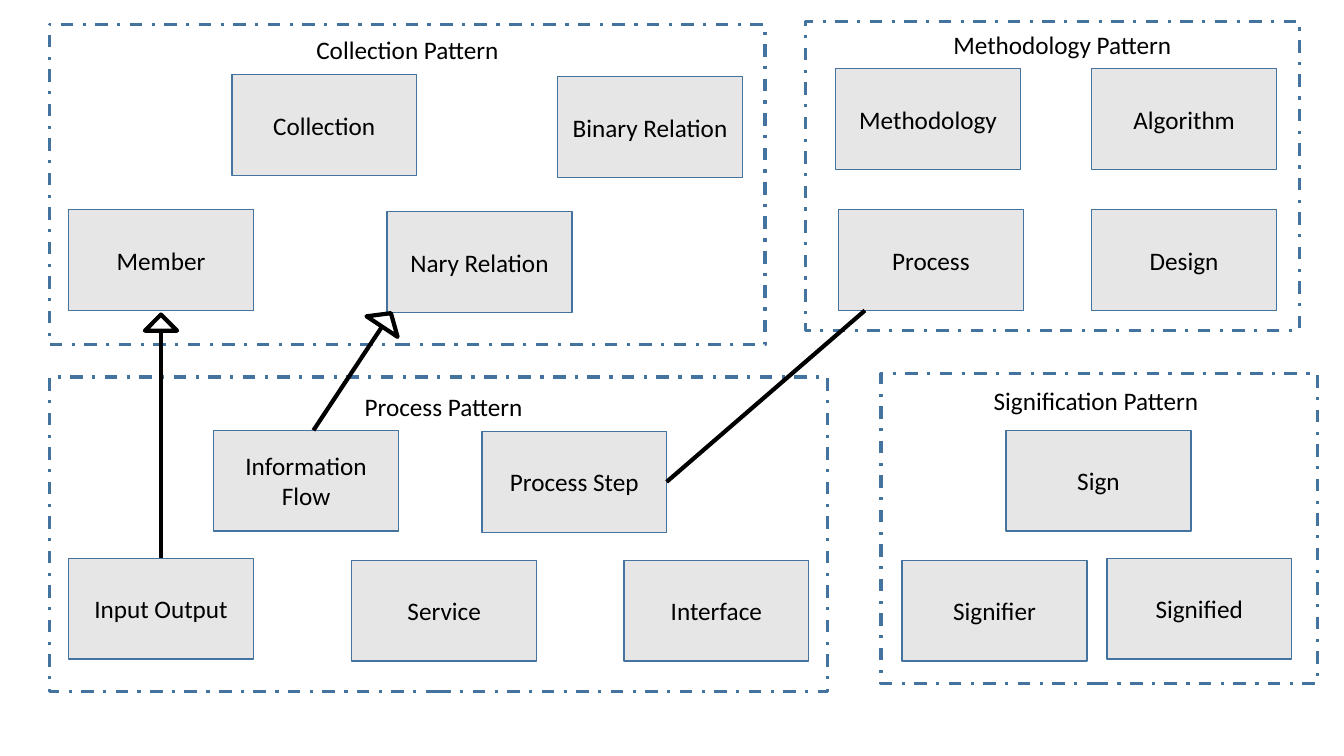
from math import atan2, cos, degrees, sin

from lxml.etree import SubElement
from pptx import Presentation
from pptx.dml.color import RGBColor
from pptx.enum.dml import MSO_LINE
from pptx.enum.shapes import MSO_CONNECTOR as CONNECTOR, MSO_SHAPE as SHAPE
from pptx.enum.text import MSO_ANCHOR as ANCHOR, MSO_AUTO_SIZE as AUTO_SIZE, PP_ALIGN as ALIGN
from pptx.oxml.ns import qn
from pptx.util import Pt

BLACK = RGBColor(0x00, 0x00, 0x00)
BLUE = RGBColor(0x43, 0x73, 0x9E)
GREY = RGBColor(0xE7, 0xE6, 0xE6)
BOX_WIDTH, BOX_HEIGHT = 132, 72
HEAD_HEIGHT = 11.5

# Each pattern: title, panel (left, top, width, height), title (left, top, width)
# and concept boxes (left, top); inner positions are relative to the panel
PATTERNS = [
    ("Collection Pattern", (35.3, 17.3, 511.2, 229), (183.6, 3.6, 146.9), {
        "Collection": (130.3, 36), "Binary Relation": (363, 37.4),
        "Member": (13.7, 132.5), "Nary Relation": (241.2, 133.9)}),
    ("Methodology Pattern", (575.3, 15.1, 352.8, 221), (98.6, 2.2, 172), {
        "Methodology": (21.6, 33.9), "Algorithm": (204.5, 33.9),
        "Process": (23.7, 134.7), "Design": (204.5, 134.7)}),
    ("Process Pattern", (35.3, 269.3, 555.8, 224.6), (218.1, 6.5, 128.9), {
        "Information Flow": (117.3, 38.1), "Process Step": (308.9, 38.9),
        "Input Output": (13.7, 129.6), "Service": (216, 131),
        "Interface": (410.4, 131)}),
    ("Signification Pattern", (629.3, 267.1, 311.8, 221), (73.4, 4.3, 162.7), {
        "Sign": (89.3, 40.3), "Signifier": (15.1, 133.2),
        "Signified": (161.3, 131.8)}),
]


def write_text(shape, text, align=ALIGN.LEFT, anchor=ANCHOR.TOP, wrap=True):
    frame = shape.text_frame
    frame.word_wrap = wrap
    frame.vertical_anchor = anchor
    paragraph = frame.paragraphs[0]
    paragraph.alignment = align
    run = paragraph.add_run()
    run.text = text
    run.font.name = "Calibri"
    run.font.size = Pt(18)
    run.font.color.rgb = BLACK


def add_outline(slide, kind, left, top, width, height, color, weight, fill=None):
    shape = slide.shapes.add_shape(kind, Pt(left), Pt(top), Pt(width), Pt(height))
    shape.shadow.inherit = False
    if fill is None:
        shape.fill.background()
    else:
        shape.fill.solid()
        shape.fill.fore_color.rgb = fill
    shape.line.color.rgb = color
    shape.line.width = Pt(weight)
    return shape


def add_pattern(slide, title, panel, title_place, concepts):
    """Draw a dashed panel with its title and boxes; return the boxes by name."""
    left, top, width, height = panel
    border = add_outline(slide, SHAPE.RECTANGLE, left, top, width, height, BLUE, 2.25)
    border.line.dash_style = MSO_LINE.DASH_DOT

    # Concept boxes
    boxes = {}
    for name, (box_left, box_top) in concepts.items():
        boxes[name] = add_outline(slide, SHAPE.RECTANGLE, left + box_left, top + box_top,
                                  BOX_WIDTH, BOX_HEIGHT, BLUE, 1, fill=GREY)
        write_text(boxes[name], name, align=ALIGN.CENTER, anchor=ANCHOR.MIDDLE)

    # Panel title
    title_left, title_top, title_width = title_place
    caption = slide.shapes.add_textbox(Pt(left + title_left), Pt(top + title_top),
                                       Pt(title_width), Pt(29))
    write_text(caption, title, wrap=False)
    caption.text_frame.auto_size = AUTO_SIZE.SHAPE_TO_FIT_TEXT
    return boxes


def add_link(slide, start, end):
    line = slide.shapes.add_connector(CONNECTOR.STRAIGHT, *map(Pt, start + end))
    line.line.color.rgb = BLACK
    line.line.width = Pt(3)
    SubElement(line._element.spPr, qn("a:effectLst"))
    return line


def add_generalization(slide, start, end, head_width):
    """Draw a line that ends at the base of a hollow triangle."""
    line = add_link(slide, start, end)
    angle = atan2(end[0] - start[0], start[1] - end[1])
    center_x = end[0] + sin(angle) * HEAD_HEIGHT / 2
    center_y = end[1] - cos(angle) * HEAD_HEIGHT / 2
    head = add_outline(slide, SHAPE.ISOSCELES_TRIANGLE, center_x - head_width / 2,
                       center_y - HEAD_HEIGHT / 2, head_width, HEAD_HEIGHT, BLACK, 3)
    head.rotation = degrees(angle)
    return line


def main():
    presentation = Presentation()
    presentation.slide_width, presentation.slide_height = Pt(960), Pt(540)
    slide = presentation.slides.add_slide(presentation.slide_layouts[6])

    boxes = {}
    for pattern in PATTERNS:
        boxes.update(add_pattern(slide, *pattern))

    # Relations between the patterns
    member_link = add_generalization(slide, (115, 398.9), (115, 236.2), 23)
    member_link.begin_connect(boxes["Input Output"], 0)
    add_generalization(slide, (223.9, 307.4), (272.9, 233.3), 26.6)
    process_link = add_link(slide, (476.2, 344.2), (617.8, 221.8))
    process_link.begin_connect(boxes["Process Step"], 3)

    presentation.save("out.pptx")


if __name__ == "__main__":
    main()
